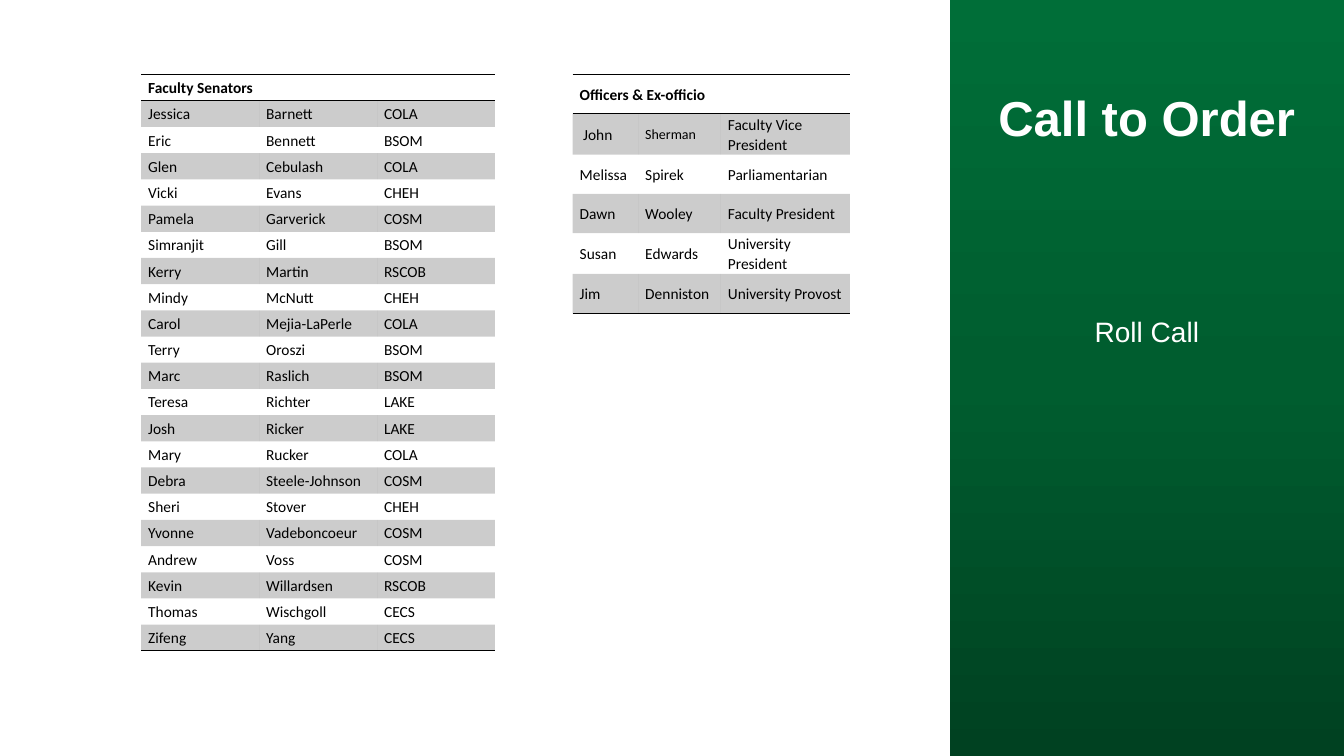
from copy import deepcopy

from lxml import etree
from pptx import Presentation
from pptx.dml.color import RGBColor
from pptx.enum.shapes import MSO_SHAPE
from pptx.enum.text import MSO_ANCHOR, MSO_AUTO_SIZE, PP_ALIGN
from pptx.oxml.ns import qn
from pptx.util import Inches, Pt

RECTANGLE = MSO_SHAPE.RECTANGLE
TOP, MIDDLE = MSO_ANCHOR.TOP, MSO_ANCHOR.MIDDLE
NO_AUTOFIT = MSO_AUTO_SIZE.NONE
CENTER = PP_ALIGN.CENTER

BLACK = RGBColor(0x00, 0x00, 0x00)
WHITE = RGBColor(0xFF, 0xFF, 0xFF)
DARK_GREEN = RGBColor(0x00, 0x41, 0x21)
MID_GREEN = RGBColor(0x00, 0x5D, 0x2F)
BRIGHT_GREEN = RGBColor(0x00, 0x6E, 0x38)

PLAIN_TABLE_STYLE = "{2D5ABB26-0587-4C30-8999-92F81FD0307C}"

SENATORS = [
    ("Jessica", "Barnett", "COLA"),
    ("Eric", "Bennett", "BSOM"),
    ("Glen", "Cebulash", "COLA"),
    ("Vicki", "Evans", "CHEH"),
    ("Pamela", "Garverick", "COSM"),
    ("Simranjit", "Gill", "BSOM"),
    ("Kerry", "Martin", "RSCOB"),
    ("Mindy", "McNutt", "CHEH"),
    ("Carol", "Mejia-LaPerle", "COLA"),
    ("Terry", "Oroszi", "BSOM"),
    ("Marc", "Raslich", "BSOM"),
    ("Teresa", "Richter", "LAKE"),
    ("Josh", "Ricker", "LAKE"),
    ("Mary", "Rucker", "COLA"),
    ("Debra", "Steele-Johnson", "COSM"),
    ("Sheri", "Stover", "CHEH"),
    ("Yvonne", "Vadeboncoeur", "COSM"),
    ("Andrew", "Voss", "COSM"),
    ("Kevin", "Willardsen", "RSCOB"),
    ("Thomas", "Wischgoll", "CECS"),
    ("Zifeng", "Yang", "CECS"),
]
OFFICERS = [
    (" John", "Sherman", "Faculty Vice President"),
    ("Melissa", "Spirek", "Parliamentarian"),
    ("Dawn", "Wooley", "Faculty President"),
    ("Susan", "Edwards", "University President"),
    ("Jim", "Denniston", "University Provost"),
]
SMALLER_NAMES = {"Sherman": 10}


def add_text(paragraph, text, size, font, color, bold=False):
    """Add one formatted run to a paragraph."""
    run = paragraph.add_run()
    run.text = text
    run.font.size = Pt(size)
    run.font.name = font
    run.font.color.rgb = color
    run.font.bold = bold


def add_border(cell, side):
    """Rule one side of a cell, 'T' or 'B', with a thin black line."""
    line = etree.SubElement(cell._tc.get_or_add_tcPr(), qn(f"a:ln{side}"), w=str(Pt(1)))
    solid = etree.SubElement(line, qn("a:solidFill"))
    etree.SubElement(solid, qn("a:srgbClr"), val=str(BLACK))


def shade(cell):
    """Fill a cell with black at 20 % opacity."""
    cell.fill.solid()
    cell.fill.fore_color.rgb = BLACK
    color = cell._tc.tcPr.find(qn("a:solidFill")).find(qn("a:srgbClr"))
    etree.SubElement(color, qn("a:alpha"), val="20000")


def format_cell(cell, text, bold, borders, shaded):
    """Set the text, borders and shading of a roster cell."""
    cell.margin_left = cell.margin_right = Inches(0.07)
    cell.margin_top = cell.margin_bottom = 0
    cell.vertical_anchor = MIDDLE
    for side in borders:
        add_border(cell, side)
    if shaded:
        shade(cell)
    else:
        cell.fill.background()
    paragraph = cell.text_frame.paragraphs[0]
    paragraph.line_spacing = 1.07
    if text:
        add_text(paragraph, text, SMALLER_NAMES.get(text, 11), "Calibri", BLACK, bold)
    else:
        etree.SubElement(paragraph._p, qn("a:endParaRPr"), sz="1100")


def add_roster(slide, left, top, column_widths, row_height, heading, people):
    """Add a ruled and banded table of people under a heading."""
    rows = [(heading, "", "")] + people
    roster = slide.shapes.add_table(
        len(rows), len(column_widths), Inches(left), Inches(top),
        Inches(sum(column_widths)), Inches(row_height * len(rows))).table
    roster._tbl.tblPr.find(qn("a:tableStyleId")).text = PLAIN_TABLE_STYLE
    roster.horz_banding = False
    for column, width in zip(roster.columns, column_widths):
        column.width = Inches(width)
    for index, person in enumerate(rows):
        roster.rows[index].height = Inches(row_height)
        is_heading = index == 0
        borders = "TB" if is_heading else "B" if index == len(people) else ""
        for column, text in enumerate(person):
            format_cell(roster.cell(index, column), text, is_heading, borders, index % 2 == 1)
    roster.cell(0, 0).merge(roster.cell(0, 1))


def add_green_panel(slide, left, top, width, height):
    """Add the side panel, shading from bright green down to dark green."""
    panel = slide.shapes.add_shape(
        RECTANGLE, Inches(left), Inches(top), Inches(width), Inches(height))
    panel.shadow.inherit = False
    panel.line.fill.background()
    panel.fill.gradient()
    stop_list = panel._element.spPr.find(".//" + qn("a:gsLst"))
    stop_list.insert(1, deepcopy(stop_list[0]))
    panel.fill.gradient_angle = 90
    greens = (DARK_GREEN, MID_GREEN, BRIGHT_GREEN)
    for stop, position, green in zip(panel.fill.gradient_stops, (0, 0.5, 1), greens):
        stop.position = position
        stop.color.rgb = green


def fill_panel_text(box, left, top, width, height, text, size, bold):
    """Place a text shape on the panel and set its centred white text."""
    box.left, box.top = Inches(left), Inches(top)
    box.width, box.height = Inches(width), Inches(height)
    frame = box.text_frame
    frame.word_wrap = True
    frame.auto_size = NO_AUTOFIT
    frame.vertical_anchor = TOP
    paragraph = frame.paragraphs[0]
    paragraph.alignment = CENTER
    add_text(paragraph, text, size, "Arial", WHITE, bold)


def add_call_to_order(slide, left, top, width, height):
    """Build the green panel with the title and agenda item."""
    add_green_panel(slide, left, top, width, height)
    title = slide.shapes.title
    slide.shapes._spTree.append(title._element)
    text_left, text_width = left + 0.25, width - 0.5
    fill_panel_text(title, text_left, top + 0.82, text_width, 2.1, "Call to Order", 35, True)
    agenda_item = slide.shapes.add_textbox(0, 0, 0, 0)
    fill_panel_text(agenda_item, text_left, top + 3.07, text_width, 1.92, "Roll Call", 20, False)


def main():
    """Build and save the roll call slide."""
    deck = Presentation()
    deck.slide_width, deck.slide_height = Inches(13.33), Inches(7.5)
    slide = deck.slides.add_slide(deck.slide_layouts[5])
    add_call_to_order(slide, 9.42, 0, 3.91, 7.5)
    add_roster(slide, 1.4, 0.74, (1.17, 1.17, 1.17), 0.26, "Faculty Senators", SENATORS)
    add_roster(slide, 5.68, 0.74, (0.65, 0.82, 1.28), 0.39, "Officers & Ex-officio", OFFICERS)
    deck.save("out.pptx")


if __name__ == "__main__":
    main()
